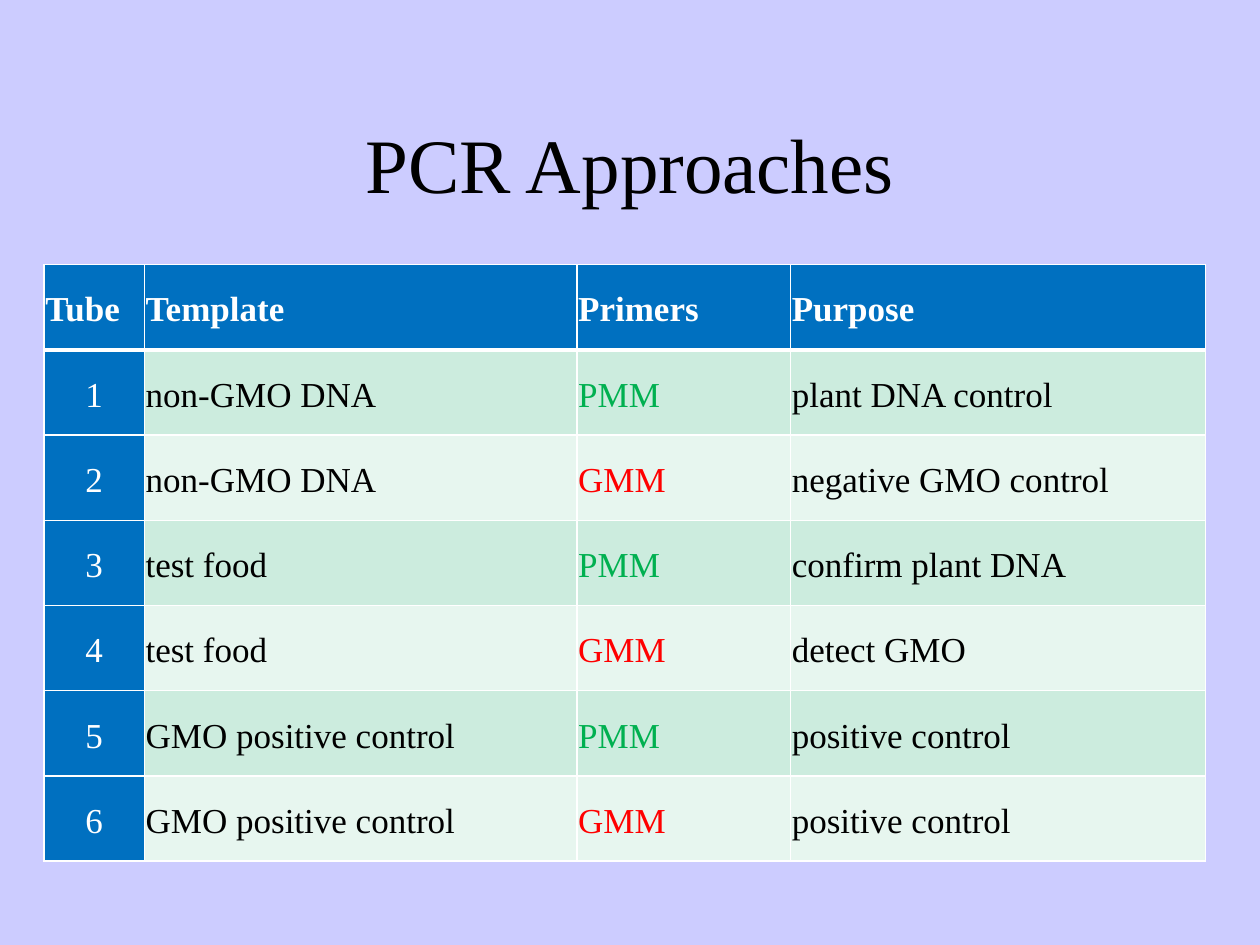
from dataclasses import dataclass

from lxml import etree
from pptx import Presentation
from pptx.dml.color import RGBColor
from pptx.enum.text import MSO_ANCHOR, PP_ALIGN
from pptx.oxml.ns import qn
from pptx.util import Inches, Pt

MIDDLE = MSO_ANCHOR.MIDDLE
LEFT, CENTER = PP_ALIGN.LEFT, PP_ALIGN.CENTER
TITLE_ONLY = 5

# The slide is laid out on a grid of 120 columns by 90 rows.
GRID_COLUMNS, GRID_ROWS = 120, 90

HEADINGS = ["Tube", "Template", "Primers", "Purpose"]
TUBES = [
    ["1", "non-GMO DNA", "PMM", "plant DNA control"],
    ["2", "non-GMO DNA", "GMM", "negative GMO control"],
    ["3", "test food", "PMM", "confirm plant DNA"],
    ["4", "test food", "GMM", "detect GMO"],
    ["5", "GMO positive control", "PMM", "positive control"],
    ["6", "GMO positive control", "GMM", "positive control"],
]


@dataclass(frozen=True)
class Theme:
    font: str = "Times New Roman"
    title_size: int = 44
    table_size: int = 20
    background: str = "CCCCFF"
    text: str = "000000"
    light: str = "FFFFFF"
    header: str = "0070C0"
    bands: tuple = ("CCECDE", "E7F6EF")
    plant_primer: str = "00B050"
    gmo_primer: str = "FF0000"
    rule: float = 1
    header_rule: float = 3


def set_all(target, values):
    for name, value in values.items():
        setattr(target, name, value)


class SlideBuilder:
    def __init__(self, deck, theme):
        self.theme = theme
        self.column = deck.slide_width / GRID_COLUMNS
        self.row = deck.slide_height / GRID_ROWS
        self.slide = deck.slides.add_slide(deck.slide_layouts[TITLE_ONLY])
        self.paint(self.slide.background.fill, theme.background)

    def paint(self, fill, color):
        fill.solid()
        fill.fore_color.rgb = RGBColor.from_string(color)

    def box(self, left, top, width, height):
        """Turn grid units into slide lengths."""
        return {
            "left": round(left * self.column),
            "top": round(top * self.row),
            "width": round(width * self.column),
            "height": round(height * self.row),
        }

    def add_text(self, frame, text, size, color, align, bold=False):
        paragraph = frame.paragraphs[0]
        paragraph.alignment = align
        run = paragraph.add_run()
        run.text = text
        set_all(run.font, {"name": self.theme.font, "size": Pt(size), "bold": bold})
        run.font.color.rgb = RGBColor.from_string(color)
        return paragraph

    def title(self, text, *area):
        placeholder = self.slide.shapes.title
        set_all(placeholder, self.box(*area))
        placeholder.text_frame.vertical_anchor = MIDDLE
        self.add_text(placeholder.text_frame, text, self.theme.title_size,
                      self.theme.text, CENTER)

    def border(self, cell, side, width):
        line = etree.SubElement(cell._tc.get_or_add_tcPr(), qn(f"a:ln{side}"),
                                w=str(Pt(width)))
        fill = etree.SubElement(line, qn("a:solidFill"))
        etree.SubElement(fill, qn("a:srgbClr"), val=self.theme.light)

    def cell_style(self, row, column, text):
        """Return the fill, text colour, alignment and weight of a cell."""
        theme = self.theme
        if row == 0:
            return theme.header, theme.light, LEFT, True
        if column == 0:
            return theme.header, theme.light, CENTER, False
        primers = {"PMM": theme.plant_primer, "GMM": theme.gmo_primer}
        band = theme.bands[(row - 1) % len(theme.bands)]
        return band, primers.get(text, theme.text), LEFT, False

    def fill_cell(self, cell, row, column, text):
        theme = self.theme
        inset = Inches(0.01)
        set_all(cell, {"margin_left": inset, "margin_right": inset,
                       "margin_top": inset, "margin_bottom": inset,
                       "vertical_anchor": MIDDLE})
        widths = {"L": theme.rule, "R": theme.rule,
                  "T": theme.header_rule if row == 1 else theme.rule,
                  "B": theme.header_rule if row == 0 else theme.rule}
        for side, width in widths.items():
            self.border(cell, side, width)
        fill, color, align, bold = self.cell_style(row, column, text)
        self.paint(cell.fill, fill)
        paragraph = self.add_text(cell.text_frame, text, theme.table_size,
                                  color, align, bold)
        set_all(paragraph, {"line_spacing": 1.15, "space_after": Pt(8)})

    def table(self, records, left, top, column_widths, row_height):
        area = self.box(left, top, sum(column_widths), row_height * len(records))
        table = self.slide.shapes.add_table(
            len(records), len(column_widths), **area).table
        table.horz_banding = False
        for column, width in zip(table.columns, column_widths):
            column.width = round(width * self.column)
        for row, record in enumerate(records):
            table.rows[row].height = round(row_height * self.row)
            for column, text in enumerate(record):
                self.fill_cell(table.cell(row, column), row, column, text)


def main():
    deck = Presentation()
    deck.slide_width, deck.slide_height = Inches(10), Inches(7.5)
    builder = SlideBuilder(deck, Theme())
    builder.title("PCR Approaches", 9, 8, 102, 15)
    builder.table([HEADINGS, *TUBES], left=4.2, top=25.2,
                  column_widths=[9.55, 41.2, 20.35, 39.5], row_height=8.12)
    deck.save("out.pptx")


if __name__ == "__main__":
    main()
